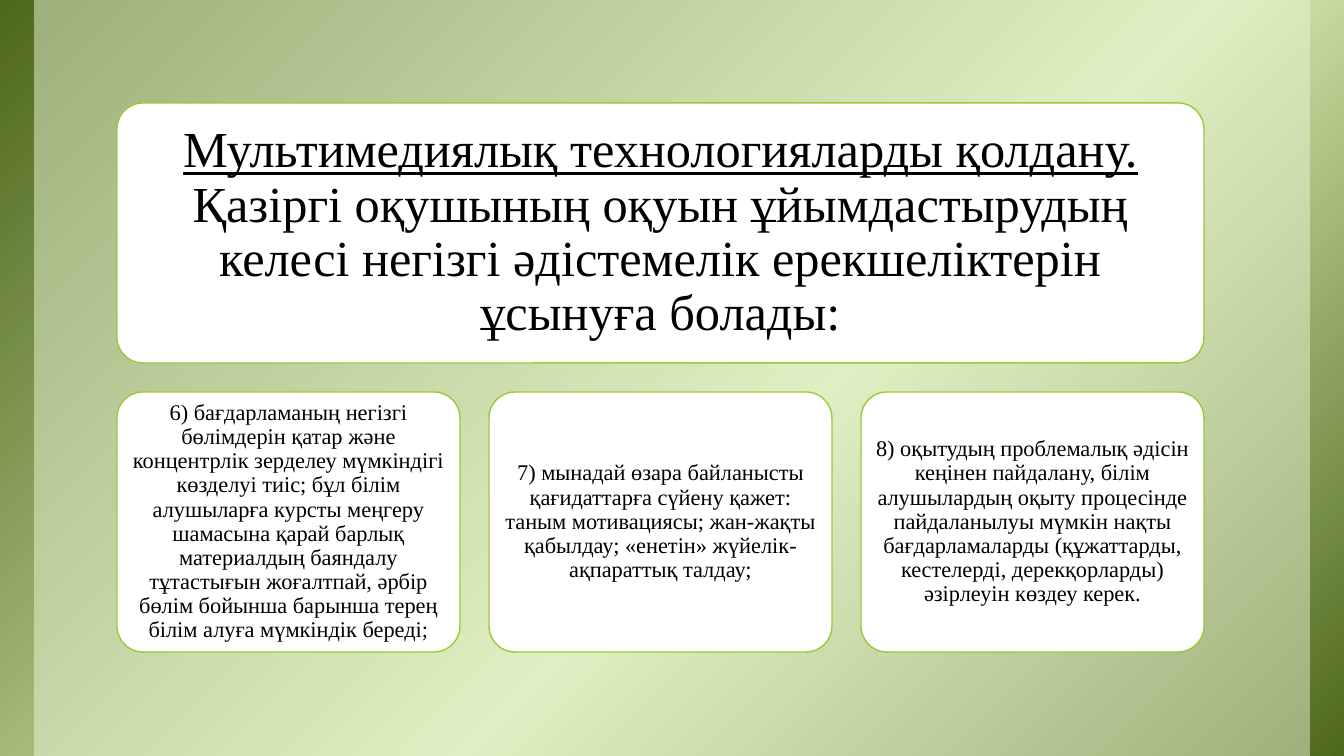
from copy import deepcopy

from lxml import etree
from pptx import Presentation
from pptx import util as u
from pptx.dml.color import RGBColor
from pptx.enum import shapes, text
from pptx.oxml import ns

PX = 914400 / 100.8
SLIDE_W, SLIDE_H = 1344, 756
LEFT, TOP, GAP = 117, 103, 29
CARD_W, CARD_H = 343, 260
FONT = "Times New Roman"
COLORS = {
    "dark": "4D671B",
    "light": "D6EAAF",
    "veil": "EBF5D7",
    "card": "FFFFFF",
    "border": "99CB38",
    "ink": "000000",
}
HEADING = [
    ("Мультимедиялық технологияларды қолдану. ", True),
    ("Қазіргі оқушының оқуын ұйымдастырудың келесі негізгі әдістемелік "
     "ерекшеліктерін ұсынуға болады:", False),
]
FEATURES = [
    "6) бағдарламаның негізгі бөлімдерін қатар және концентрлік зерделеу "
    "мүмкіндігі көзделуі тиіс; бұл білім алушыларға курсты меңгеру шамасына "
    "қарай барлық материалдың баяндалу тұтастығын жоғалтпай, әрбір бөлім "
    "бойынша барынша терең білім алуға мүмкіндік береді;",
    "7) мынадай өзара байланысты қағидаттарға сүйену қажет: таным "
    "мотивациясы; жан-жақты қабылдау; «енетін» жүйелік-ақпараттық талдау;",
    "8) оқытудың проблемалық әдісін кеңінен пайдалану, білім алушылардың "
    "оқыту процесінде пайдаланылуы мүмкін нақты бағдарламаларды "
    "(құжаттарды, кестелерді, дерекқорларды) әзірлеуін көздеу керек.",
]


def px(length):
    """Turn pixels into EMU."""
    return u.Emu(round(length * PX))


def color(name):
    """Return a named colour of the slide."""
    return RGBColor.from_string(COLORS[name])


def add_block(slide, kind, left, top, width, height):
    """Add a preset shape without shadow or line."""
    block = slide.shapes.add_shape(kind, px(left), px(top), px(width), px(height))
    block.shadow.inherit = False
    block.line.fill.background()
    return block


def add_backdrop(slide):
    """Add the diagonal green gradient over the whole slide."""
    backdrop = add_block(slide, shapes.MSO_SHAPE.RECTANGLE, 0, 0, SLIDE_W, SLIDE_H)
    fill = backdrop.fill
    fill.gradient()
    fill.gradient_angle = 315
    stop_list = backdrop._element.spPr.find(".//" + ns.qn("a:gsLst"))
    stop_list.append(deepcopy(stop_list[-1]))
    for stop, (position, name) in zip(
        fill.gradient_stops, [(0, "dark"), (0.58, "light"), (1, "dark")]
    ):
        stop.position = position
        stop.color.rgb = color(name)


def add_veil(slide):
    """Add the half-transparent pale band."""
    veil = add_block(slide, shapes.MSO_SHAPE.RECTANGLE, 34, 0, 1276, SLIDE_H)
    veil.fill.solid()
    veil.fill.fore_color.rgb = color("veil")
    tint = veil._element.spPr.find(".//" + ns.qn("a:srgbClr"))
    etree.SubElement(tint, ns.qn("a:alpha"), val="50000")


def add_card(slide, left, top, width, runs, size, inset):
    """Add a rounded white card with centred text."""
    card = add_block(
        slide, shapes.MSO_SHAPE.ROUNDED_RECTANGLE, left, top, width, CARD_H
    )
    card.adjustments[0] = 0.1
    card.fill.solid()
    card.fill.fore_color.rgb = color("card")
    card.line.color.rgb = color("border")
    card.line.width = u.Pt(1)
    frame = card.text_frame
    frame.word_wrap = True
    frame.vertical_anchor = text.MSO_ANCHOR.MIDDLE
    frame.margin_left = frame.margin_right = px(inset)
    frame.margin_top = frame.margin_bottom = px(inset)
    paragraph = frame.paragraphs[0]
    paragraph.alignment = text.PP_ALIGN.CENTER
    paragraph.line_spacing = 0.9
    for words, underlined in runs:
        run = paragraph.add_run()
        run.text = words
        run.font.name = FONT
        run.font.size = u.Pt(size)
        run.font.underline = underlined
        run.font.color.rgb = color("ink")


def main():
    """Build and save the slide."""
    deck = Presentation()
    deck.slide_width, deck.slide_height = px(SLIDE_W), px(SLIDE_H)
    slide = deck.slides.add_slide(deck.slide_layouts[6])
    add_backdrop(slide)
    add_veil(slide)
    heading_w = len(FEATURES) * (CARD_W + GAP) - GAP
    add_card(slide, LEFT, TOP, heading_w, HEADING, 36, 15)
    for column, feature in enumerate(FEATURES):
        left = LEFT + column * (CARD_W + GAP)
        add_card(slide, left, TOP + CARD_H + GAP, CARD_W, [(feature, False)], 16, 7)
    deck.save("out.pptx")


if __name__ == "__main__":
    main()
